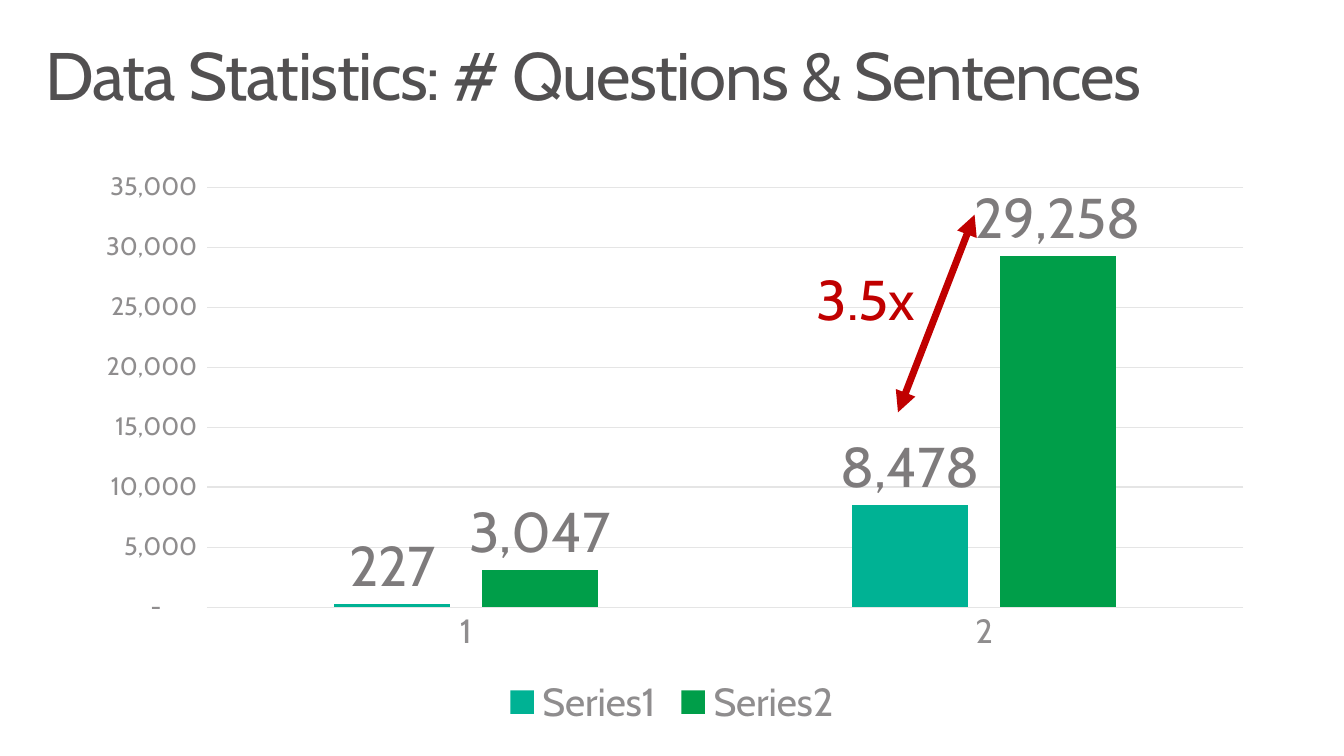
import pptx
import pptx.util
import pptx.chart.data
import pptx.dml.color
import pptx.enum.chart
import pptx.enum.shapes
import pptx.enum.text
import pptx.oxml.ns
import lxml.etree

Cm, Pt = pptx.util.Cm, pptx.util.Pt

# Content; positions in cm
FONT = "Cabin"
NUMBER_FORMAT = '_(* #,##0_);_(* \\(#,##0\\);_(* "-"??_);_('
TITLE = dict(text="Data Statistics: # Questions & Sentences", box=(0.74, 0.81, 32.39, 2.49),
             margins=(0.41, 0.25), size=48, color="525051", spacing=-100)
RATIO = dict(text="3.5x", box=(20.07, 6.45, 4.52, 2.36),
             margins=(0.51, 0.41), size=40, color="C00000", after=6)
CHART_BOX = (1.93, 4.04, 30, 14.45)
CATEGORIES = ["1", "2"]
SERIES = [("Series1", (227, 8478), "00B294"), ("Series2", (3047, 29258), "009E49")]
ARROW = (22.63, 10.39, 24.56, 5.41)
AXIS_TEXT, LABEL_TEXT, GRID = "8F8D8E", "7E7B7C", "E5E5E5"


def rgb(value):
    return pptx.dml.color.RGBColor.from_string(value)


def set_font(font, size, color):
    font.name, font.size, font.bold = FONT, Pt(size), False
    font.color.rgb = rgb(color)


def set_line(line, color, width):
    line.color.rgb = rgb(color)
    line.width = Pt(width)


def add_text(s, text, box, margins, size, color, spacing=0, after=0):
    tf = s.shapes.add_textbox(*map(Cm, box)).text_frame
    tf.word_wrap = True
    tf.vertical_anchor = pptx.enum.text.MSO_ANCHOR.TOP
    tf.margin_left = tf.margin_right = Cm(margins[0])
    tf.margin_top = tf.margin_bottom = Cm(margins[1])
    p = tf.paragraphs[0]
    p.line_spacing, p.space_after = 0.9, Pt(after)
    r = p.add_run()
    r.text = text
    set_font(r.font, size, color)
    if spacing:
        r.font._element.set("spc", str(spacing))


def add_columns(s):
    data = pptx.chart.data.CategoryChartData(number_format=NUMBER_FORMAT)
    data.categories = CATEGORIES
    for name, values, _ in SERIES:
        data.add_series(name, values)
    chart = s.shapes.add_chart(pptx.enum.chart.XL_CHART_TYPE.COLUMN_CLUSTERED,
                               *map(Cm, CHART_BOX), data).chart
    set_font(chart.font, 10, "525051")
    chart.has_title = False

    # Legend
    chart.has_legend = True
    chart.legend.position = pptx.enum.chart.XL_LEGEND_POSITION.BOTTOM
    chart.legend.include_in_layout = False
    set_font(chart.legend.font, 28, AXIS_TEXT)

    # Axes
    cat, val = chart.category_axis, chart.value_axis
    for axis, size in ((cat, 24), (val, 18)):
        axis.major_tick_mark = axis.minor_tick_mark = pptx.enum.chart.XL_TICK_MARK.NONE
        set_font(axis.tick_labels.font, size, AXIS_TEXT)
    set_line(cat.format.line, GRID, 0.75)
    val.format.line.fill.background()
    val.has_major_gridlines = True
    set_line(val.major_gridlines.format.line, GRID, 0.75)
    val.minimum_scale, val.maximum_scale, val.major_unit = 0, 35000, 5000
    val.tick_labels.number_format = NUMBER_FORMAT
    val.tick_labels.number_format_is_linked = False

    # Columns and their labels
    plot = chart.plots[0]
    plot.gap_width, plot.overlap, plot.vary_by_categories = 219, -27, False
    for series, (_, _, color) in zip(plot.series, SERIES):
        series.format.fill.solid()
        series.format.fill.fore_color.rgb = rgb(color)
        series.invert_if_negative = False
        labels = series.data_labels
        labels.show_value = True
        labels.position = pptx.enum.chart.XL_LABEL_POSITION.OUTSIDE_END
        labels.number_format = NUMBER_FORMAT
        labels.number_format_is_linked = False
        set_font(labels.font, 40, LABEL_TEXT)


def add_double_arrow(s):
    arrow = s.shapes.add_connector(pptx.enum.shapes.MSO_CONNECTOR.STRAIGHT, *map(Cm, ARROW))
    set_line(arrow.line, "C00000", 5)
    qn = pptx.oxml.ns.qn
    ln = arrow.line._get_or_add_ln()
    for end in ("a:headEnd", "a:tailEnd"):
        lxml.etree.SubElement(ln, qn(end), type="triangle")
    lxml.etree.SubElement(arrow._element.spPr, qn("a:effectLst"))


def main():
    prs = pptx.Presentation()
    prs.slide_width, prs.slide_height = Cm(33.87), Cm(19.05)
    s = prs.slides.add_slide(prs.slide_layouts[6])
    add_text(s, **TITLE)
    add_columns(s)
    add_double_arrow(s)
    add_text(s, **RATIO)
    prs.save("out.pptx")


if __name__ == "__main__":
    main()
